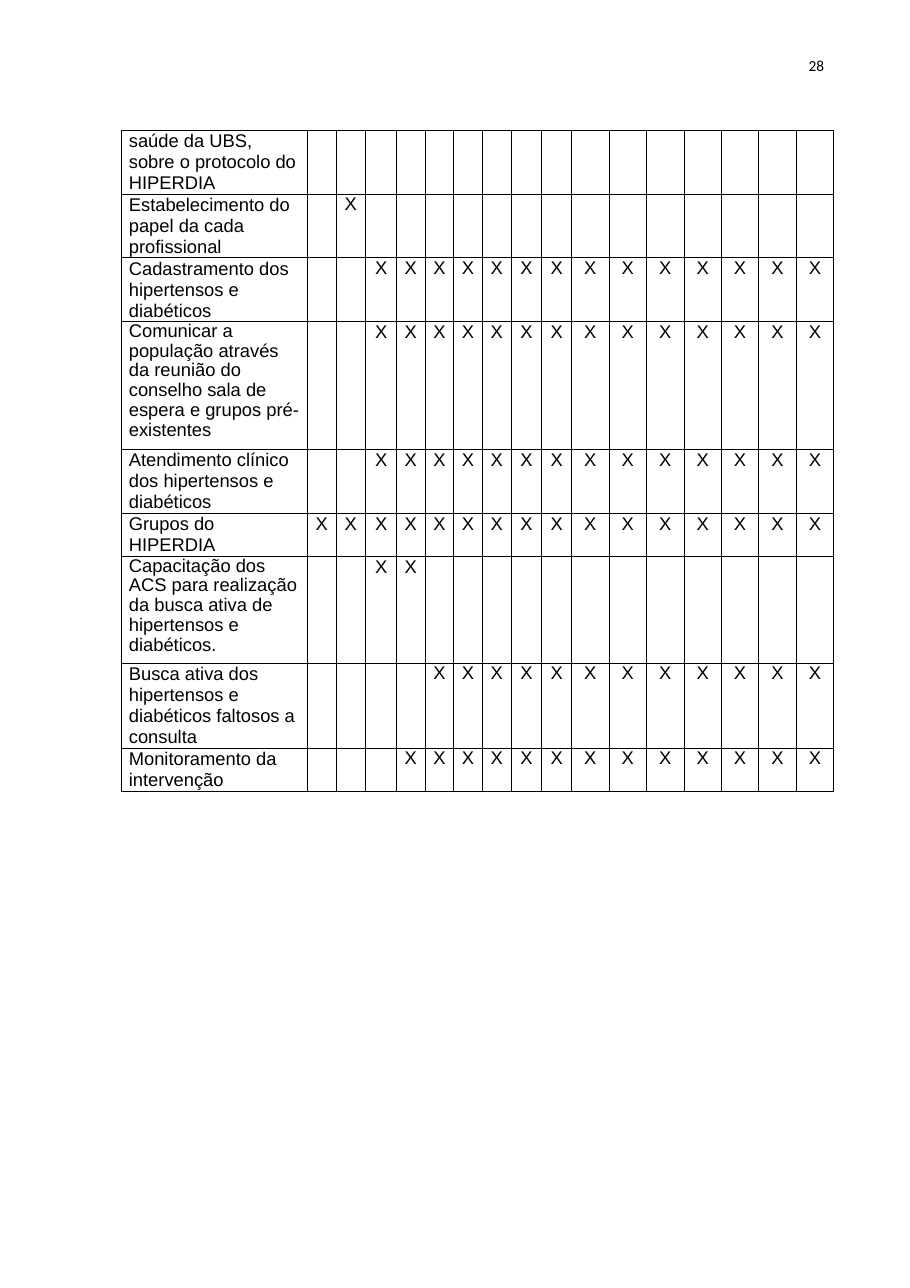
"""Builds page 28: the activity schedule of the HIPERDIA intervention."""
from lxml import etree
from pptx import Presentation
from pptx.dml.color import RGBColor
from pptx.enum.text import PP_ALIGN
from pptx.oxml.ns import qn
from pptx.util import Pt

PX = 9144
BLACK = "000000"
LEFT, CENTER = PP_ALIGN.LEFT, PP_ALIGN.CENTER
BLANK_LAYOUT = 6
BORDER_WIDTH = Pt(0.58)
BORDER_SIDES = ("a:lnL", "a:lnR", "a:lnT", "a:lnB")
EXACT, TIGHT = Pt(13.8), 0.96
COLUMN_WIDTHS = [169, 26, 27, 28, 26, 26, 26, 26, 28, 27] + [34] * 7
NO_WEEKS = range(0)
ACTIVITIES = [
    ("saúde da UBS, sobre o protocolo do HIPERDIA", 58, EXACT, NO_WEEKS),
    ("Estabelecimento do papel da cada profissional", 58, EXACT, range(2, 3)),
    ("Cadastramento dos hipertensos e diabéticos", 58, EXACT, range(3, 17)),
    ("Comunicar a população através da reunião do conselho sala de espera "
     "e grupos pré-existentes", 116, TIGHT, range(3, 17)),
    ("Atendimento clínico dos hipertensos e diabéticos", 58, EXACT, range(3, 17)),
    ("Grupos do HIPERDIA", 39, EXACT, range(1, 17)),
    ("Capacitação dos ACS para realização da busca ativa de hipertensos "
     "e diabéticos.", 97, TIGHT, range(3, 5)),
    ("Busca ativa dos hipertensos e diabéticos faltosos a consulta",
     77, EXACT, range(5, 17)),
    ("Monitoramento da intervenção", 39, EXACT, range(4, 17)),
]


def px(length):
    """Turn a length in px into EMU."""
    return length * PX


def color(hex_value):
    """Turn a hex string into a colour."""
    return RGBColor.from_string(hex_value)


def apply_format(target, values):
    """Set every attribute named in a dict."""
    for name, value in values.items():
        setattr(target, name, value)


def set_margins(target, left=0, right=0):
    """Set the side margins and clear the upper and lower ones."""
    apply_format(target, {"margin_left": px(left), "margin_right": px(right),
                          "margin_top": 0, "margin_bottom": 0})


def write_text(text_frame, text, font_name, size, alignment=LEFT, line_spacing=1.0):
    """Write one formatted paragraph."""
    paragraph = text_frame.paragraphs[0]
    apply_format(paragraph, {"alignment": alignment, "line_spacing": line_spacing})
    run = paragraph.add_run()
    run.text = text
    apply_format(run.font, {"name": font_name, "size": Pt(size), "bold": False})
    run.font.color.rgb = color(BLACK)


def draw_borders(cell):
    """Give a cell a thin black line on each side."""
    properties = cell._tc.get_or_add_tcPr()
    for side in BORDER_SIDES:
        line = etree.SubElement(properties, qn(side), w=str(BORDER_WIDTH))
        fill = etree.SubElement(line, qn("a:solidFill"))
        etree.SubElement(fill, qn("a:srgbClr"), val=BLACK)


def add_page_number(slide, number):
    """Add the page number at the upper right."""
    box = slide.shapes.add_textbox(px(733), px(51), px(17), px(17))
    box.text_frame.word_wrap = True
    set_margins(box.text_frame, left=1)
    write_text(box.text_frame, number, "Calibri", 10)


def add_schedule(slide, left, top):
    """Add the table of activities and the weeks marked for each."""
    height = sum(activity[1] for activity in ACTIVITIES)
    table = slide.shapes.add_table(
        len(ACTIVITIES), len(COLUMN_WIDTHS),
        px(left), px(top), px(sum(COLUMN_WIDTHS)), px(height)).table
    apply_format(table, {"first_row": False, "horz_banding": False})
    for column, width in zip(table.columns, COLUMN_WIDTHS):
        column.width = px(width)
    for cell in table.iter_cells():
        set_margins(cell)
        draw_borders(cell)
        cell.fill.background()
    for index, (name, row_height, line_spacing, weeks) in enumerate(ACTIVITIES):
        table.rows[index].height = px(row_height)
        name_cell = table.cell(index, 0)
        set_margins(name_cell, left=7, right=7)
        write_text(name_cell.text_frame, name, "Arial", 12, line_spacing=line_spacing)
        for week in weeks:
            write_text(table.cell(index, week).text_frame, "X", "Arial", 12, CENTER)


def main():
    """Build and save the page."""
    presentation = Presentation()
    apply_format(presentation, {"slide_width": px(826), "slide_height": px(1169)})
    slide = presentation.slides.add_slide(presentation.slide_layouts[BLANK_LAYOUT])
    add_page_number(slide, "28")
    add_schedule(slide, 110, 118)
    presentation.save("out.pptx")


if __name__ == "__main__":
    main()
